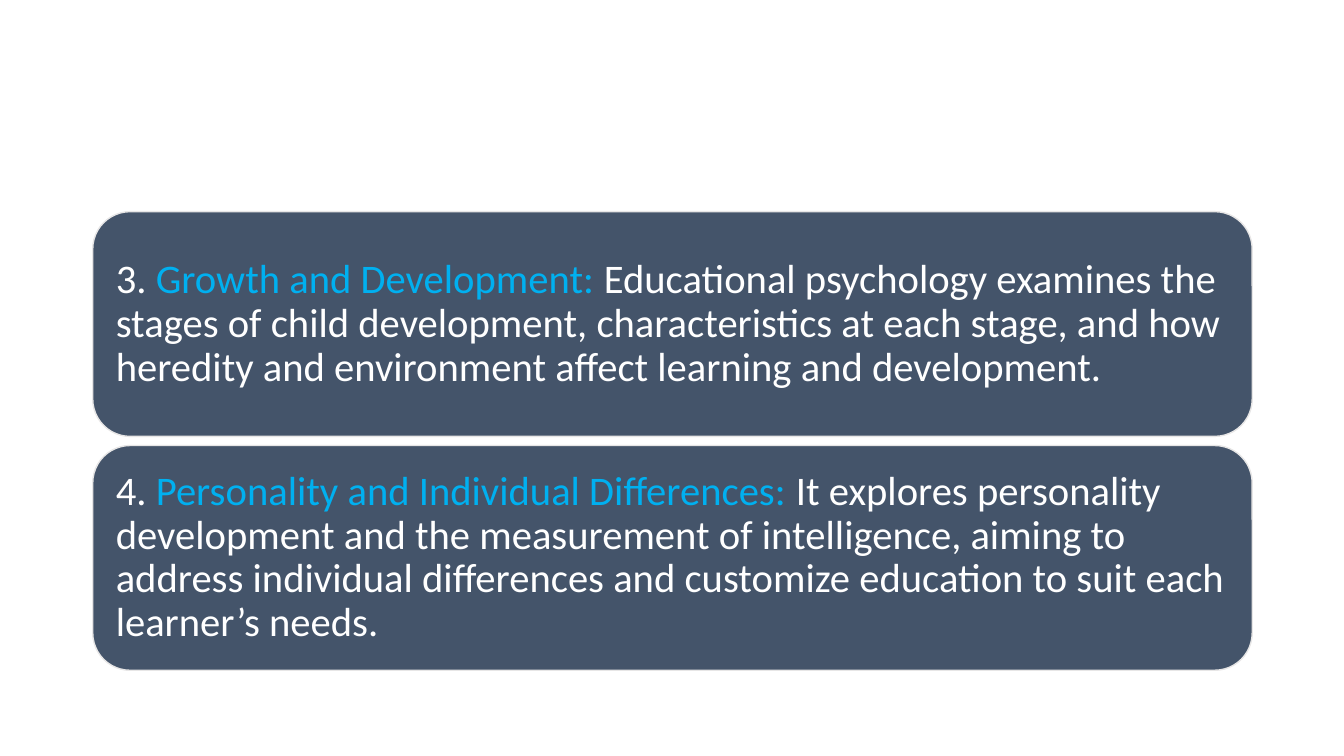
from pptx import Presentation
from pptx.dml.color import RGBColor
from pptx.enum.shapes import MSO_SHAPE as Shape
from pptx.enum.text import MSO_ANCHOR as Anchor, PP_ALIGN as Align
from pptx.util import Inches, Pt

WHITE, SLATE, SKY, PALE = "FFFFFF", "44546A", "00B0F0", "E7E6E6"
TOPICS = [
    ("3. ", "Growth and Development: ",
     "Educational psychology examines the stages of child development, "
     "characteristics at each stage, and how heredity and environment affect "
     "learning and development."),
    ("4. ", "Personality and Individual Differences: ",
     "It explores personality development and the measurement of intelligence, "
     "aiming to address individual differences and customize education to suit "
     "each learner’s needs."),
]
INSET = Inches(0.12)
FRAME_FORMAT = {
    "word_wrap": True, "vertical_anchor": Anchor.MIDDLE,
    "margin_left": INSET, "margin_right": INSET,
    "margin_top": INSET, "margin_bottom": INSET,
}
PARAGRAPH_FORMAT = {"alignment": Align.LEFT, "line_spacing": 0.9}
FONT_FORMAT = {"name": "Calibri", "size": Pt(29)}


def color(value):
    """Turn a hex string into a colour."""
    return RGBColor.from_string(value)


def apply_format(target, values):
    """Set each named attribute on the target."""
    for name, value in values.items():
        setattr(target, name, value)


def add_topic_card(slide, topic, left, top, width, height):
    """Draw one rounded card with its number, heading and description."""
    shape = slide.shapes.add_shape(
        Shape.ROUNDED_RECTANGLE, Inches(left), Inches(top), Inches(width), Inches(height))
    shape.shadow.inherit = False
    shape.fill.solid()
    shape.fill.fore_color.rgb = color(SLATE)
    shape.line.color.rgb = color(PALE)
    shape.line.width = Pt(1)
    apply_format(shape.text_frame, FRAME_FORMAT)
    paragraph = shape.text_frame.paragraphs[0]
    apply_format(paragraph, PARAGRAPH_FORMAT)
    for text, text_color in zip(topic, (WHITE, SKY, WHITE)):
        run = paragraph.add_run()
        run.text = text
        apply_format(run.font, FONT_FORMAT)
        run.font.color.rgb = color(text_color)


def add_topic_list(slide, left, top, width, height, gap=0.09):
    """Stack the topic cards evenly in the given box."""
    card_height = (height - gap * (len(TOPICS) - 1)) / len(TOPICS)
    for index, topic in enumerate(TOPICS):
        card_top = top + index * (card_height + gap)
        add_topic_card(slide, topic, left, card_top, width, card_height)


def main():
    """Build and save the presentation."""
    presentation = Presentation()
    presentation.slide_width = Inches(13.33)
    presentation.slide_height = Inches(7.5)
    slide = presentation.slides.add_slide(presentation.slide_layouts[6])
    add_topic_list(slide, 0.92, 2.1, 11.5, 4.55)
    presentation.save("out.pptx")


if __name__ == "__main__":
    main()
